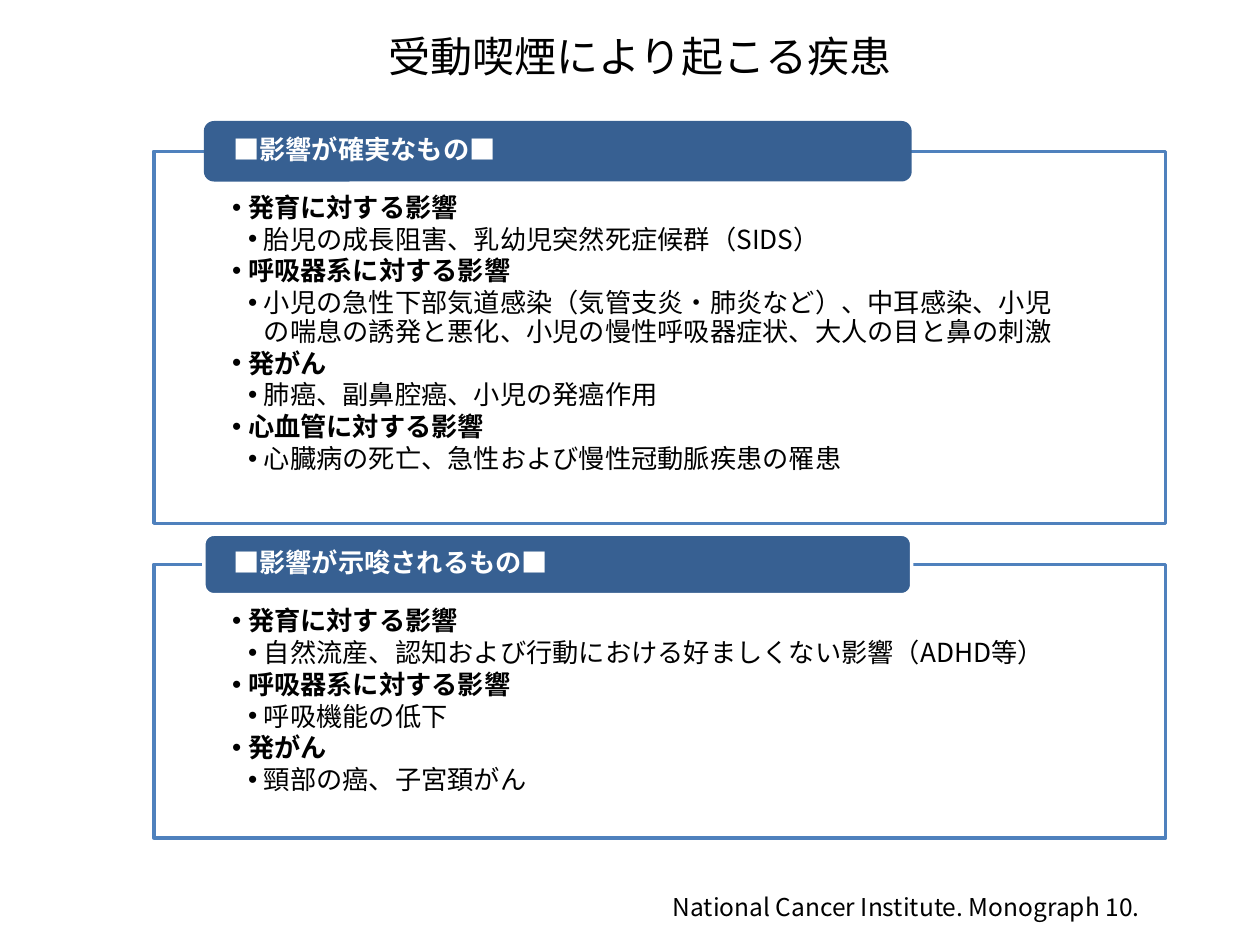
import pptx
import pptx.dml.color
import pptx.enum.shapes
import pptx.enum.text
import pptx.oxml.ns
import pptx.util
from lxml import etree

Cm = pptx.util.Cm
Pt = pptx.util.Pt
RGBColor = pptx.dml.color.RGBColor
MSO_ANCHOR = pptx.enum.text.MSO_ANCHOR
MSO_AUTO_SIZE = pptx.enum.text.MSO_AUTO_SIZE
PP_ALIGN = pptx.enum.text.PP_ALIGN
qn = pptx.oxml.ns.qn

BLACK = RGBColor(0x00, 0x00, 0x00)
WHITE = RGBColor(0xFF, 0xFF, 0xFF)
FRAME_BLUE = RGBColor(0x4F, 0x81, 0xBD)
HEADING_BLUE = RGBColor(0x37, 0x60, 0x92)

PANEL_LEFT, PANEL_WIDTH = 3.1, 20.4
HEADING_LEFT, HEADING_WIDTH, HEADING_HEIGHT = 4.11, 14.27, 1.22
BULLET_STEP = 0.32

CERTAIN = [
    ("発育に対する影響", "胎児の成長阻害、乳幼児突然死症候群（SIDS）"),
    ("呼吸器系に対する影響",
     "小児の急性下部気道感染（気管支炎・肺炎など）、中耳感染、小児　"
     "の喘息の誘発と悪化、小児の慢性呼吸器症状、大人の目と鼻の刺激"),
    ("発がん", "肺癌、副鼻腔癌、小児の発癌作用"),
    ("心血管に対する影響", "心臓病の死亡、急性および慢性冠動脈疾患の罹患"),
]
SUGGESTED = [
    ("発育に対する影響", "自然流産、認知および行動における好ましくない影響（ADHD等）"),
    ("呼吸器系に対する影響", "呼吸機能の低下"),
    ("発がん", "頸部の癌、子宮頚がん"),
]


class DiseaseSlide:
    font_name = "Noto Sans CJK JP"
    text_size = 15

    def __init__(self, slide):
        self.slide = slide

    def place(self, shape, left, top, width, height):
        shape.left, shape.top = Cm(left), Cm(top)
        shape.width, shape.height = Cm(width), Cm(height)

    def inset(self, frame, left, top, right, bottom):
        frame.margin_left, frame.margin_top = Cm(left), Cm(top)
        frame.margin_right, frame.margin_bottom = Cm(right), Cm(bottom)

    def add_text(self, paragraph, text, size, color=BLACK, bold=False):
        run = paragraph.add_run()
        run.text = text
        run.font.name = self.font_name
        run.font.size = Pt(size)
        run.font.bold = bold
        run.font.color.rgb = color
        east_asian = etree.SubElement(run._r.get_or_add_rPr(), qn("a:ea"))
        east_asian.set("typeface", self.font_name)

    def bullet(self, paragraph, level):
        """Hang a round bullet one step left of the text of this level."""
        properties = paragraph._p.get_or_add_pPr()
        properties.set("marL", str(Cm(BULLET_STEP * level)))
        properties.set("indent", str(-Cm(BULLET_STEP)))
        etree.SubElement(properties, qn("a:buChar")).set("char", "•")
        paragraph.level = level
        paragraph.line_spacing = 0.9
        paragraph.space_before = Pt(0)
        paragraph.space_after = Pt(2)

    def title(self, text):
        title = self.slide.shapes.title
        self.place(title, 2.1, 0.33, 21.6, 1.6)
        frame = title.text_frame
        frame.auto_size = MSO_AUTO_SIZE.NONE
        frame.vertical_anchor = MSO_ANCHOR.MIDDLE
        paragraph = frame.paragraphs[0]
        paragraph.alignment = PP_ALIGN.CENTER
        self.add_text(paragraph, text, 24)

    def panel(self, body, top, height, effects):
        self.place(body, PANEL_LEFT, top, PANEL_WIDTH, height)
        body.fill.solid()
        body.fill.fore_color.rgb = WHITE
        body.line.color.rgb = FRAME_BLUE
        body.line.width = Pt(2)
        frame = body.text_frame
        frame.auto_size = MSO_AUTO_SIZE.NONE
        frame.vertical_anchor = MSO_ANCHOR.TOP
        self.inset(frame, 1.58, 0.87, 1.58, 0.3)
        lines = [(level, text) for effect in effects
                 for level, text in enumerate(effect, start=1)]
        for index, (level, text) in enumerate(lines):
            paragraph = frame.add_paragraph() if index else frame.paragraphs[0]
            self.bullet(paragraph, level)
            self.add_text(paragraph, text, self.text_size, bold=level == 1)

    def heading(self, panel_top, text, outlined):
        """Put a rounded heading centred on the top edge of a panel."""
        heading = self.slide.shapes.add_shape(
            pptx.enum.shapes.MSO_SHAPE.ROUNDED_RECTANGLE,
            Cm(HEADING_LEFT), Cm(panel_top - HEADING_HEIGHT / 2),
            Cm(HEADING_WIDTH), Cm(HEADING_HEIGHT))
        heading.shadow.inherit = False
        heading.fill.solid()
        heading.fill.fore_color.rgb = HEADING_BLUE
        if outlined:
            heading.line.color.rgb = WHITE
            heading.line.width = Pt(2)
        else:
            heading.line.fill.background()
        frame = heading.text_frame
        frame.word_wrap = True
        frame.vertical_anchor = MSO_ANCHOR.MIDDLE
        self.inset(frame, 0.53, 0, 0.53, 0)
        paragraph = frame.paragraphs[0]
        paragraph.alignment = PP_ALIGN.LEFT
        paragraph.line_spacing = 0.9
        self.add_text(paragraph, text, self.text_size, WHITE, bold=True)

    def reference(self, text):
        box = self.slide.shapes.add_textbox(Cm(13.31), Cm(17.86), Cm(11), Cm(0.86))
        frame = box.text_frame
        frame.word_wrap = True
        frame.auto_size = MSO_AUTO_SIZE.SHAPE_TO_FIT_TEXT
        self.add_text(frame.paragraphs[0], text, 14)


def main():
    deck = pptx.Presentation()
    deck.slide_width, deck.slide_height = Cm(25.4), Cm(19.05)
    two_content = deck.slide_layouts[3]
    page = DiseaseSlide(deck.slides.add_slide(two_content))
    certain_list, suggested_list = list(page.slide.placeholders)[1:3]

    page.title("受動喫煙により起こる疾患")
    panels = [
        (certain_list, 3.05, 7.5, "■影響が確実なもの■", CERTAIN, False),
        (suggested_list, 11.38, 5.51, "■影響が示唆されるもの■", SUGGESTED, True),
    ]
    for body, top, height, heading, effects, outlined in panels:
        page.panel(body, top, height, effects)
        page.heading(top, heading, outlined)
    page.reference("National Cancer Institute. Monograph 10.")
    deck.save("out.pptx")


if __name__ == "__main__":
    main()
